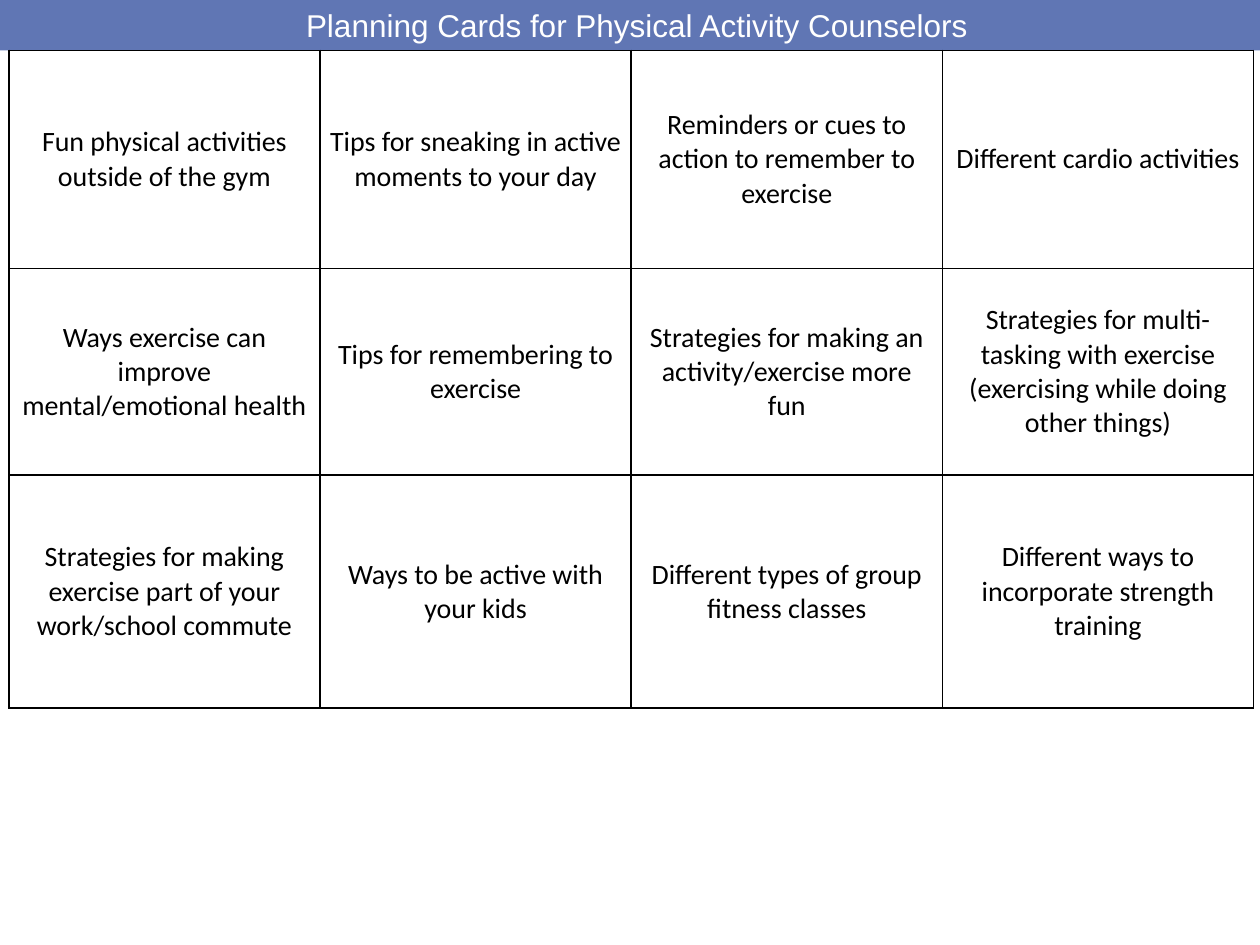
from lxml import etree
from pptx import Presentation
from pptx.dml.color import RGBColor
from pptx.enum.shapes import MSO_SHAPE
from pptx.enum.text import MSO_ANCHOR, PP_ALIGN
from pptx.oxml.ns import qn
from pptx.util import Inches, Pt

RECT = MSO_SHAPE.RECTANGLE
MIDDLE = MSO_ANCHOR.MIDDLE
CENTER = PP_ALIGN.CENTER
TITLE = "Planning Cards for Physical Activity Counselors"
COL = 2.47
ROWS = [1.73, 1.64, 1.85]
CARDS = [
    ["Fun physical activities outside of the gym",
     "Tips for sneaking in active moments to your day",
     "Reminders or cues to action to remember to exercise",
     "Different cardio activities"],
    ["Ways exercise can improve mental/emotional health",
     "Tips for remembering to exercise",
     "Strategies for making an activity/exercise more fun",
     "Strategies for multi-tasking with exercise (exercising while doing other things)"],
    ["Strategies for making exercise part of your work/school commute",
     "Ways to be active with your kids",
     "Different types of group fitness classes",
     "Different ways to incorporate strength training"],
]


def color(code):
    """Turn a hex string into a colour."""
    return RGBColor.from_string(code)


def write(frame, text, font, size, code):
    """Set centred text in one font."""
    frame.text = text
    para = frame.paragraphs[0]
    para.alignment = CENTER
    face = para.runs[0].font
    face.name = font
    face.size = Pt(size)
    face.color.rgb = color(code)


def add_band(slide, code):
    """Draw the band across the top."""
    band = slide.shapes.add_shape(RECT, 0, 0, Inches(10), Inches(0.4))
    band.shadow.inherit = False
    band.fill.solid()
    band.fill.fore_color.rgb = color(code)
    band.line.fill.background()


def add_title(slide, text):
    """Place the title on the band."""
    box = slide.shapes.add_textbox(Inches(1.46), 0, Inches(7.19), Inches(0.4))
    box.text_frame.word_wrap = True
    write(box.text_frame, text, "Arial", 18, "FFFFFF")


def add_edges(cell, code, width):
    """Draw a line on each side of a cell."""
    props = cell._tc.get_or_add_tcPr()
    for side in ("lnL", "lnR", "lnT", "lnB"):
        line = etree.SubElement(props, qn(f"a:{side}"), w=str(Pt(width)))
        fill = etree.SubElement(line, qn("a:solidFill"))
        etree.SubElement(fill, qn("a:srgbClr"), val=code)


def fill_cell(cell, text):
    """Format one card and write its text."""
    cell.margin_left = cell.margin_right = Inches(0.07)
    cell.margin_top = cell.margin_bottom = 0
    cell.vertical_anchor = MIDDLE
    add_edges(cell, "000000", 1)
    cell.fill.background()
    write(cell.text_frame, text, "Calibri", 16, "000000")


def add_cards(slide, cards):
    """Build the table of planning cards."""
    count = len(cards[0])
    table = slide.shapes.add_table(
        len(cards), count, Inches(0.07), Inches(0.4),
        Inches(COL * count), Inches(sum(ROWS))).table
    table.first_row = table.horz_banding = False
    for col in table.columns:
        col.width = Inches(COL)
    for r, (high, texts) in enumerate(zip(ROWS, cards)):
        table.rows[r].height = Inches(high)
        for c, text in enumerate(texts):
            fill_cell(table.cell(r, c), text)


def main():
    """Build and save the slide."""
    deck = Presentation()
    deck.slide_width = Inches(10)
    deck.slide_height = Inches(7.5)
    slide = deck.slides.add_slide(deck.slide_layouts[6])
    add_band(slide, "6076B4")
    add_cards(slide, CARDS)
    add_title(slide, TITLE)
    deck.save("out.pptx")


if __name__ == "__main__":
    main()
